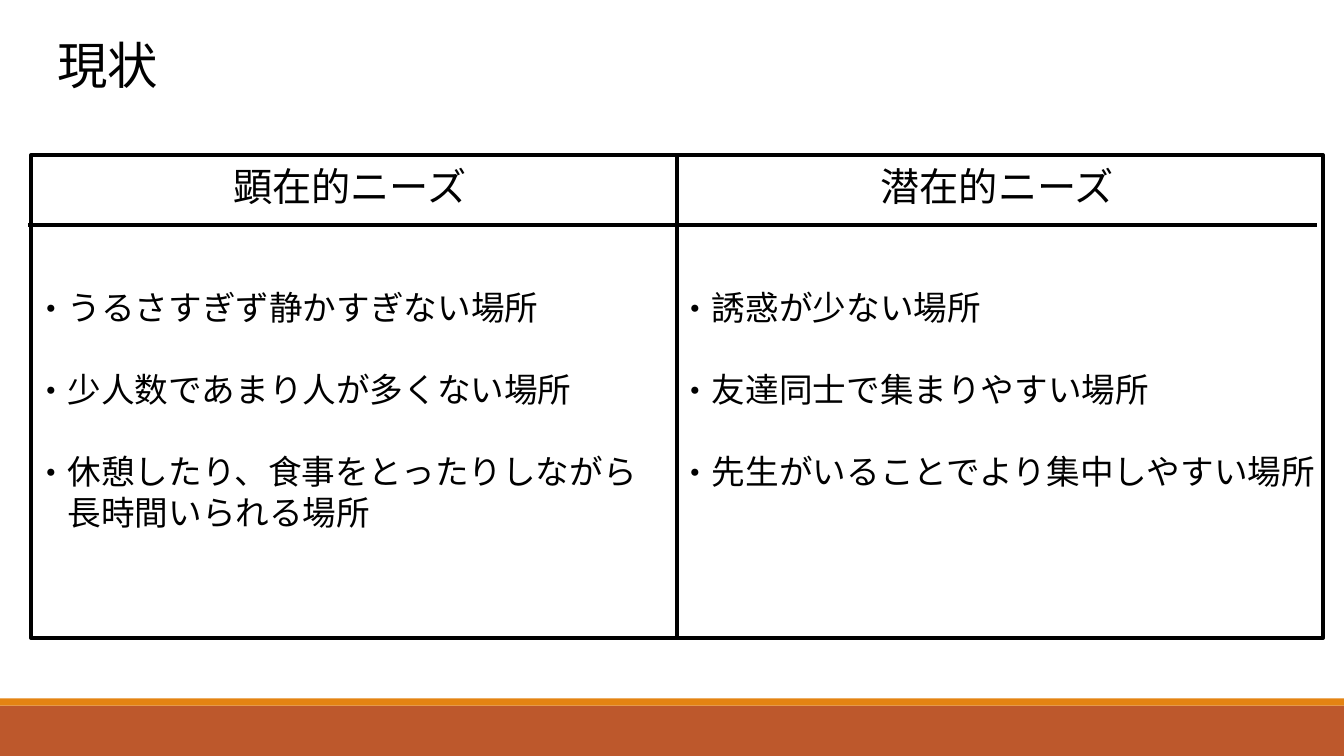
"""Build the slide that sets explicit needs beside latent needs."""
from dataclasses import dataclass

from lxml.etree import SubElement
from pptx import Presentation
from pptx.dml.color import RGBColor
from pptx.enum.shapes import MSO_CONNECTOR, MSO_SHAPE
from pptx.enum.text import MSO_ANCHOR, MSO_AUTO_SIZE, PP_ALIGN
from pptx.oxml.ns import qn
from pptx.util import Inches, Pt

FONT = "Noto Sans CJK JP"
BLACK = "000000"
LINE_RATIO = 1.22


@dataclass
class Band:
    top: float
    height: float
    color: str


@dataclass
class NeedsColumn:
    heading: str
    heading_left: float
    needs: list[str]
    needs_left: float
    needs_width: float
    needs_height: float


BANDS = [Band(7, 0.5, "BD582C"), Band(6.93, 0.07, "E48312")]
COLUMNS = [
    NeedsColumn(
        "顕在的ニーズ", 2.17,
        ["うるさすぎず静かすぎない場所", "少人数であまり人が多くない場所",
         "休憩したり、食事をとったりしながら\v長時間いられる場所"],
        0.24, 6.26, 2.83),
    NeedsColumn(
        "潜在的ニーズ", 8.59,
        ["誘惑が少ない場所", "友達同士で集まりやすい場所",
         "先生がいることでより集中しやすい場所"],
        6.63, 6.6, 2.12),
]


def rgb(color: str) -> RGBColor:
    return RGBColor.from_string(color)


def style(paragraph, size: float, align=PP_ALIGN.LEFT) -> None:
    paragraph.alignment = align
    paragraph.line_spacing = Pt(round(size * LINE_RATIO, 1))
    font = paragraph.font
    font.size, font.name = Pt(size), FONT
    font.color.rgb = rgb(BLACK)
    defaults = paragraph._p.pPr.find(qn("a:defRPr"))
    SubElement(defaults, qn("a:ea")).set("typeface", FONT)


def add_bullet(paragraph, size: float) -> None:
    properties = paragraph._p.get_or_add_pPr()
    properties.set("marL", str(Pt(size)))
    properties.set("indent", str(-Pt(size)))
    SubElement(properties, qn("a:buFont")).set("typeface", FONT)
    SubElement(properties, qn("a:buChar")).set("char", "・")


def prepare_frame(text_frame) -> None:
    text_frame.word_wrap = True
    text_frame.auto_size = MSO_AUTO_SIZE.NONE
    text_frame.vertical_anchor = MSO_ANCHOR.TOP


def add_text_frame(slide, left: float, top: float, width: float, height: float):
    box = slide.shapes.add_textbox(
        Inches(left), Inches(top), Inches(width), Inches(height))
    prepare_frame(box.text_frame)
    return box.text_frame


def add_title(slide, text: str) -> None:
    title = slide.shapes.title
    title.left, title.top = Inches(0.47), Inches(0.28)
    title.width, title.height = Inches(2.7), Inches(0.71)
    prepare_frame(title.text_frame)
    title.text_frame.text = text
    style(title.text_frame.paragraphs[0], 36)


def add_rectangle(slide, left: float, top: float, width: float, height: float):
    rectangle = slide.shapes.add_shape(
        MSO_SHAPE.RECTANGLE, Inches(left), Inches(top), Inches(width), Inches(height))
    rectangle.shadow.inherit = False
    return rectangle


def add_band(slide, band: Band) -> None:
    rectangle = add_rectangle(slide, 0, band.top, 13.33, band.height)
    rectangle.fill.solid()
    rectangle.fill.fore_color.rgb = rgb(band.color)
    rectangle.line.fill.background()


def add_rule(slide, x1: float, y1: float, x2: float, y2: float):
    rule = slide.shapes.add_connector(
        MSO_CONNECTOR.STRAIGHT, Inches(x1), Inches(y1), Inches(x2), Inches(y2))
    rule.line.color.rgb = rgb(BLACK)
    rule.line.width = Pt(3)
    SubElement(rule._element.spPr, qn("a:effectLst"))
    return rule


def add_grid(slide) -> None:
    border = add_rectangle(slide, 0.31, 1.54, 12.81, 4.79)
    border.fill.background()
    border.line.color.rgb = rgb(BLACK)
    border.line.width = Pt(3)
    add_rule(slide, 0.28, 2.23, 13.06, 2.23)
    divider = add_rule(slide, 6.72, 1.54, 6.72, 6.33)
    divider.begin_connect(border, 0)
    divider.end_connect(border, 2)


def add_column(slide, column: NeedsColumn) -> None:
    heading = add_text_frame(slide, column.heading_left, 1.55, 2.6, 0.57)
    heading.text = column.heading
    style(heading.paragraphs[0], 28, PP_ALIGN.CENTER)

    needs = add_text_frame(
        slide, column.needs_left, 2.79, column.needs_width, column.needs_height)
    for index, need in enumerate(column.needs):
        paragraph = needs.add_paragraph() if index else needs.paragraphs[0]
        paragraph.text = need
        if index:
            paragraph.space_before = Pt(round(24 * LINE_RATIO, 1))
        add_bullet(paragraph, 24)
        style(paragraph, 24)


def main() -> None:
    presentation = Presentation()
    presentation.slide_width = Inches(13.33)
    presentation.slide_height = Inches(7.5)
    slide = presentation.slides.add_slide(presentation.slide_layouts[5])
    for band in BANDS:
        add_band(slide, band)
    add_title(slide, "現状")
    add_grid(slide)
    for column in COLUMNS:
        add_column(slide, column)
    presentation.save("out.pptx")


if __name__ == "__main__":
    main()
